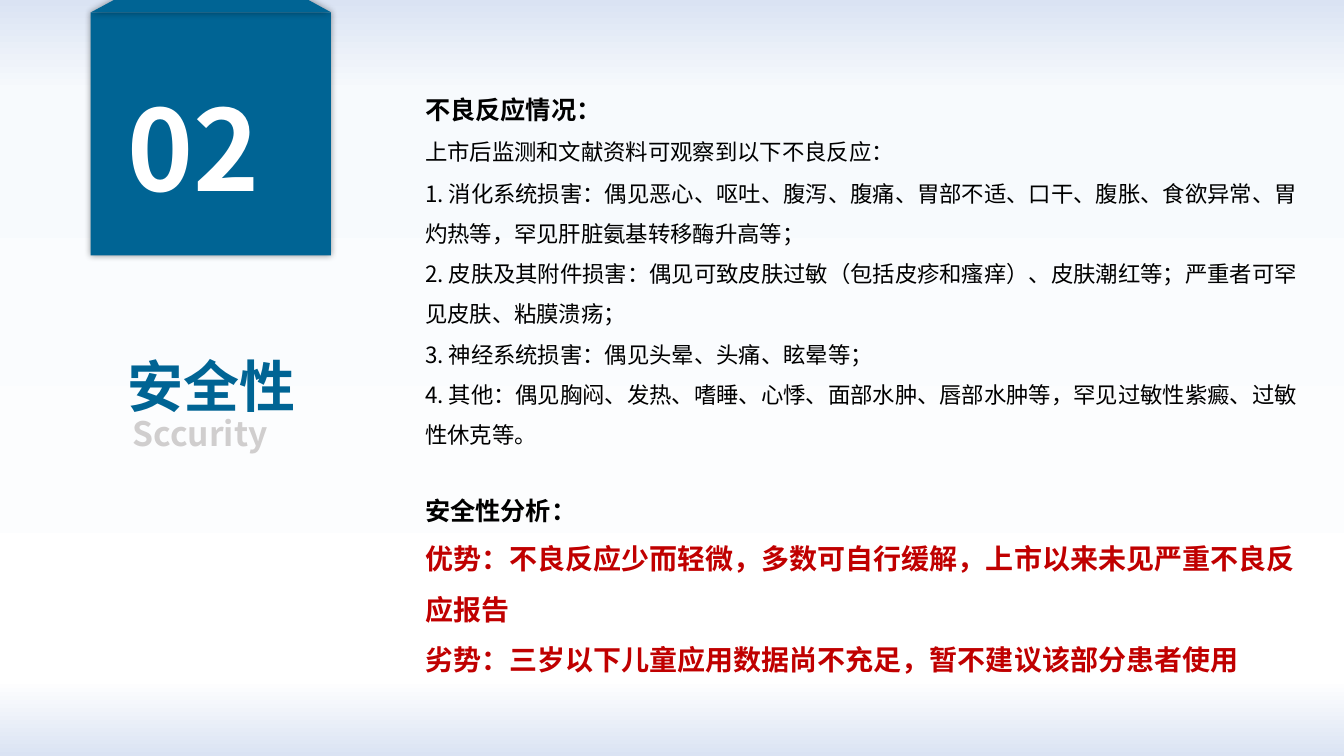
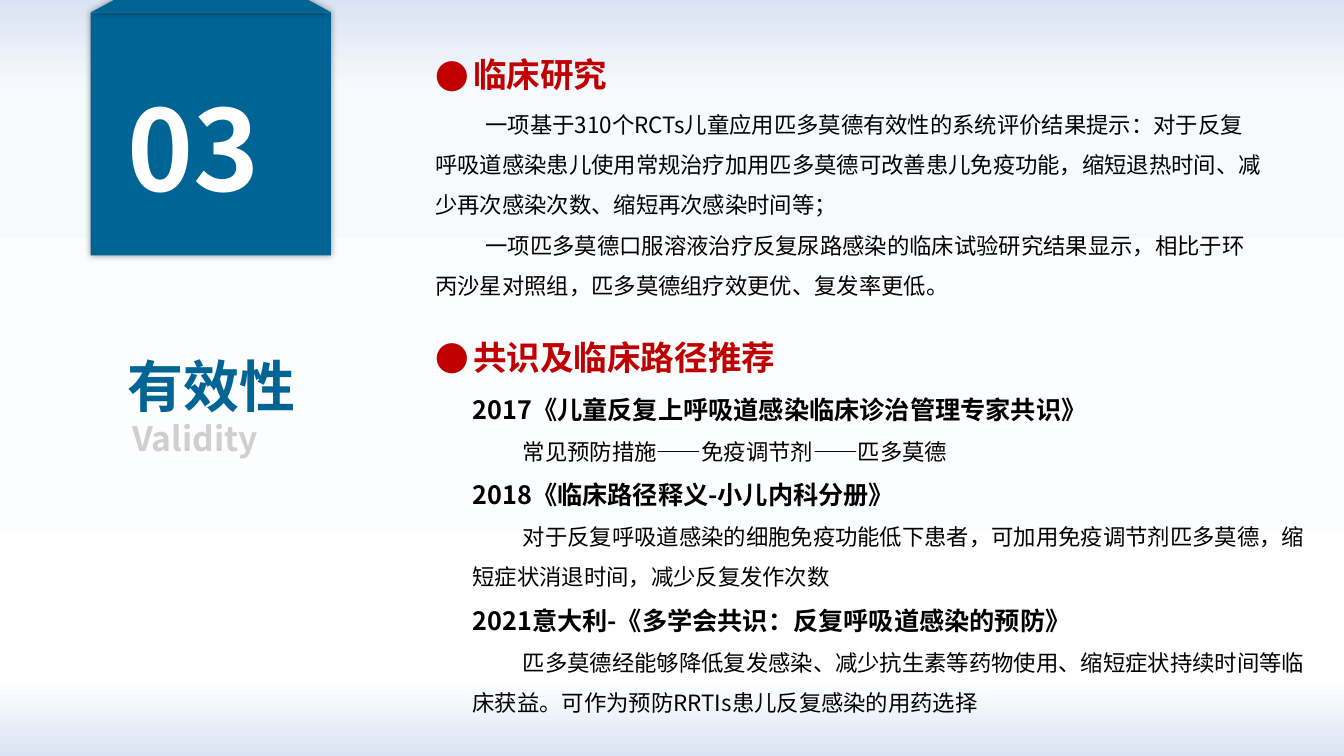
"""Build two section slides on the safety and the efficacy of a medicine."""
from dataclasses import dataclass

from lxml import etree
from pptx import Presentation
from pptx.dml.color import RGBColor
from pptx.enum.shapes import MSO_SHAPE
from pptx.enum.text import MSO_AUTO_SIZE, PP_ALIGN
from pptx.oxml.ns import qn
from pptx.util import Pt

RECT = MSO_SHAPE.RECTANGLE
LEFT, CENTER, JUSTIFY = PP_ALIGN.LEFT, PP_ALIGN.CENTER, PP_ALIGN.JUSTIFY
FIT_SHAPE = MSO_AUTO_SIZE.SHAPE_TO_FIT_TEXT

FONT = "Noto Sans CJK SC"
BLUE = RGBColor(0x00, 0x64, 0x94)
RED = RGBColor(0xC0, 0x00, 0x00)
BLACK = RGBColor(0x00, 0x00, 0x00)
WHITE = RGBColor(0xFF, 0xFF, 0xFF)
GREY = RGBColor(0xD0, 0xCE, 0xCE)
PALE_BLUE = RGBColor(0xDA, 0xE3, 0xF3)
MIST = RGBColor(0xF7, 0xFA, 0xFD)
BACKGROUND_STOPS = ((0, PALE_BLUE), (12, MIST), (90, WHITE), (100, PALE_BLUE))

CARD = (64.8, 8.9, 171.6, 173.5)
FLAP_POINTS = ((81.4, 0), (220.3, 0), (236.6, 8.9), (64.8, 8.9))
FIRST_LINE = 36
BULLET_INDENT = 27


@dataclass(frozen=True)
class Para:
    text: str
    size: float = 16
    color: RGBColor = BLACK
    bold: bool = False
    align: PP_ALIGN = LEFT
    spacing: float = 1.5
    margin: float = 0
    indent: float = 0
    bullet: str = ""


@dataclass(frozen=True)
class TextBox:
    left: float
    top: float
    width: float
    height: float
    paras: tuple[Para, ...]


@dataclass(frozen=True)
class Section:
    number: str
    title: str
    subtitle: str
    subtitle_top: float
    boxes: tuple[TextBox, ...]


def heading(text: str) -> Para:
    return Para(text, size=18, bold=True)


def verdict(text: str) -> Para:
    return Para(text, size=20, color=RED, bold=True)


def indented(text: str) -> Para:
    return Para(text, indent=FIRST_LINE)


def topic(top: float, text: str) -> TextBox:
    para = Para(text, 24, RED, True, margin=BULLET_INDENT,
                indent=-BULLET_INDENT, bullet="●")
    return TextBox(303.8, top, 643.7, 46, (para,))


SECTIONS = (
    Section("02", "安全性", "Sccurity", 277.2, (
        TextBox(296.6, 53.3, 485.3, 65.5, (
            heading("不良反应情况："),
            Para("上市后监测和文献资料可观察到以下不良反应："),
        )),
        TextBox(296.6, 115.2, 643.7, 207.4, (
            Para("1. 消化系统损害：偶见恶心、呕吐、腹泻、腹痛、胃部不适、口干、腹胀、"
                 "食欲异常、胃灼热等，罕见肝脏氨基转移酶升高等；"),
            Para("2. 皮肤及其附件损害：偶见可致皮肤过敏（包括皮疹和瘙痒）、皮肤潮红等；"
                 "严重者可罕见皮肤、粘膜溃疡；"),
            Para("3. 神经系统损害：偶见头晕、头痛、眩晕等；"),
            Para("4. 其他：偶见胸闷、发热、嗜睡、心悸、面部水肿、唇部水肿等，"
                 "罕见过敏性紫癜、过敏性休克等。"),
        )),
        TextBox(296.6, 339.1, 643.7, 144.7, (
            heading("安全性分析："),
            verdict("优势：不良反应少而轻微，多数可自行缓解，上市以来未见严重不良反应报告"),
            verdict("劣势：三岁以下儿童应用数据尚不充足，暂不建议该部分患者使用"),
        )),
    )),
    Section("03", "有效性", "Validity", 280.8, (
        TextBox(303.8, 66.2, 607, 149, (
            indented("一项基于310个RCTs儿童应用匹多莫德有效性的系统评价结果提示：对于反复"
                     "呼吸道感染患儿使用常规治疗加用匹多莫德可改善患儿免疫功能，"
                     "缩短退热时间、减少再次感染次数、缩短再次感染时间等；"),
            indented("一项匹多莫德口服溶液治疗反复尿路感染的临床试验研究结果显示，"
                     "相比于环丙沙星对照组，匹多莫德组疗效更优、复发率更低。"),
        )),
        topic(20.9, "临床研究"),
        topic(222.5, "共识及临床路径推荐"),
        TextBox(330.5, 267.1, 609.1, 251.3, (
            heading("2017《儿童反复上呼吸道感染临床诊治管理专家共识》"),
            indented("常见预防措施——免疫调节剂——匹多莫德"),
            heading("2018《临床路径释义-小儿内科分册》"),
            indented("对于反复呼吸道感染的细胞免疫功能低下患者，可加用免疫调节剂匹多莫德，"
                     "缩短症状消退时间，减少反复发作次数"),
            heading("2021意大利-《多学会共识：反复呼吸道感染的预防》"),
            indented("匹多莫德经能够降低复发感染、减少抗生素等药物使用、缩短症状持续时间等"
                     "临床获益。可作为预防RRTIs患儿反复感染的用药选择"),
        )),
    )),
)


def set_background(master) -> None:
    fill = master.background.fill
    fill.gradient()
    fill.gradient_angle = 270
    stops = master.element.xpath(".//p:bgPr/a:gradFill/a:gsLst")[0]
    for stop in list(stops):
        stops.remove(stop)
    for percent, color in BACKGROUND_STOPS:
        stop = etree.SubElement(stops, qn("a:gs"), pos=str(percent * 1000))
        etree.SubElement(stop, qn("a:srgbClr"), val=str(color))


def style_card(sp) -> None:
    sp.fill.solid()
    sp.fill.fore_color.rgb = BLUE
    sp.line.fill.background()
    sp.shadow.inherit = False
    effects = sp._element.spPr.find(qn("a:effectLst"))
    shadow = etree.SubElement(effects, qn("a:outerShdw"), blurRad=str(Pt(5)),
                              dist="0", dir="0", algn="ctr", rotWithShape="0")
    color = etree.SubElement(shadow, qn("a:srgbClr"), val=str(BLACK))
    etree.SubElement(color, qn("a:alpha"), val="40000")


def add_card(s) -> None:
    style_card(s.shapes.add_shape(RECT, *map(Pt, CARD)))
    start, *others = [(Pt(x), Pt(y)) for x, y in FLAP_POINTS]
    builder = s.shapes.build_freeform(*start)
    builder.add_line_segments(others, close=True)
    style_card(builder.convert_to_shape())


def fill_paragraph(p, para: Para) -> None:
    p.alignment = para.align
    p.line_spacing = para.spacing
    p_pr = p._p.get_or_add_pPr()
    p_pr.set("marL", str(Pt(para.margin)))
    p_pr.set("indent", str(Pt(para.indent)))
    if para.bullet:
        etree.SubElement(p_pr, qn("a:buFont"), typeface=FONT)
        etree.SubElement(p_pr, qn("a:buChar"), char=para.bullet)
    r = p.add_run()
    r.text = para.text
    r.font.size = Pt(para.size)
    r.font.bold = para.bold
    r.font.color.rgb = para.color
    r.font.name = FONT
    etree.SubElement(r._r.get_or_add_rPr(), qn("a:ea"), typeface=FONT)


def add_text(s, box: TextBox) -> None:
    sp = s.shapes.add_textbox(Pt(box.left), Pt(box.top), Pt(box.width), Pt(box.height))
    tf = sp.text_frame
    tf.word_wrap = True
    tf.auto_size = FIT_SHAPE
    for i, para in enumerate(box.paras):
        fill_paragraph(tf.add_paragraph() if i else tf.paragraphs[0], para)


def add_section(prs, section: Section) -> None:
    s = prs.slides.add_slide(prs.slide_layouts[6])
    add_card(s)
    number = Para(section.number, 80, WHITE, True, JUSTIFY, 1)
    title = Para(section.title, 40, BLUE, True, CENTER)
    subtitle = Para(section.subtitle, 24, GREY, True, JUSTIFY)
    labels = (
        TextBox(84.2, 53.3, 117.4, 104.4, (number,)),
        TextBox(-10.8, 223.2, 323.3, 71.3, (title,)),
        TextBox(87.5, section.subtitle_top, 126.4, 46, (subtitle,)),
    )
    for box in labels + section.boxes:
        add_text(s, box)


def main() -> None:
    prs = Presentation()
    prs.slide_width, prs.slide_height = Pt(960), Pt(540)
    set_background(prs.slide_master)
    for section in SECTIONS:
        add_section(prs, section)
    prs.save("out.pptx")


if __name__ == "__main__":
    main()
